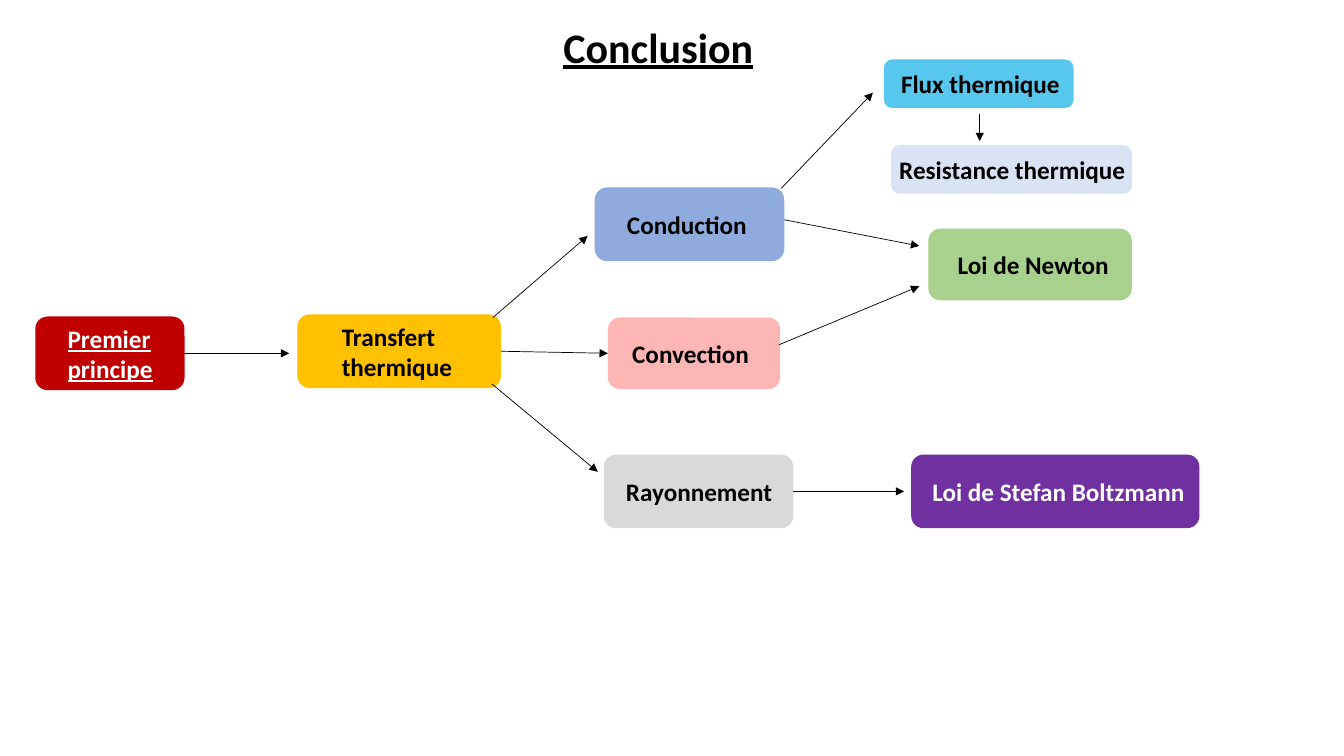
import pptx
import pptx.dml.color
import pptx.enum.shapes
import pptx.enum.text
import pptx.oxml.ns
import pptx.util
from lxml import etree

Pt = pptx.util.Pt
RIGHT, LEFT = 3, 1
MARGIN = 7.2
CORNER = 0.1667 * 0.29
COLOURS = {
    "black": "000000",
    "white": "FFFFFF",
    "red": "C00000",
    "amber": "FFC000",
    "blue": "8FAADC",
    "pink": "FEB6B4",
    "grey": "D9D9D9",
    "sky": "58C7EE",
    "pale": "DAE3F3",
    "green": "A9D18E",
    "purple": "7030A0",
}

# name: text, left, top, width, height, fill, text offset, text format
BOXES = {
    "principle": ("Premier principe", 25.2, 226.1, 106.6, 52.6, "red", 15.8,
                  {"colour": "white", "underline": True}),
    "transfer": ("Transfert thermique", 212.4, 224.6, 145.4, 52.6, "amber", 24.5, {}),
    "conduction": ("Conduction", 424.8, 133.9, 135.4, 52.6, "blue", 15.8, {}),
    "convection": ("Convection", 434.2, 226.8, 123.1, 51.1, "pink", 10.1, {}),
    "radiation": ("Rayonnement", 431.3, 324.7, 135.4, 52.6, "grey", 8.6, {}),
    "flux": ("Flux thermique", 631.4, 42.5, 135.4, 34.6, "sky", 5, {}),
    "resistance": ("Resistance thermique", 636.5, 103.7, 172.1, 34.6, "pale", -1.4, {}),
    "newton": ("Loi de Newton", 663.1, 163.4, 145.4, 51.1, "green", 13.7, {}),
    "stefan": ("Loi de Stefan Boltzmann", 650.9, 324.7, 205.9, 52.6, "purple", 7.9,
               {"colour": "white"}),
}

FREE_ARROWS = [
    ((352.1, 226.8), (419.8, 168.5)),
    ((351.4, 274.3), (427, 337)),
    ((558, 134.6), (623.5, 66.2)),
    ((560.2, 157), (656.6, 175.7)),
    ((556.6, 246.2), (656.6, 204.5)),
    ((699.8, 81.4), (699.8, 100.8)),
]


def colour_of(name):
    return pptx.dml.color.RGBColor.from_string(COLOURS[name])


def write_text(frame, text, size=18, colour="black", underline=False,
               anchor=pptx.enum.text.MSO_ANCHOR.MIDDLE):
    frame.word_wrap = True
    frame.auto_size = pptx.enum.text.MSO_AUTO_SIZE.NONE
    frame.vertical_anchor = anchor
    paragraph = frame.paragraphs[0]
    paragraph.alignment = pptx.enum.text.PP_ALIGN.LEFT
    paragraph.line_spacing = 1.0
    paragraph.space_before = Pt(0)
    run = paragraph.add_run()
    run.text = text
    run.font.name = "Calibri"
    run.font.size = Pt(size)
    run.font.bold = True
    run.font.underline = underline
    run.font.color.rgb = colour_of(colour)


def add_title(slide, text):
    title = slide.shapes.title
    title.left, title.top = Pt(395.3), Pt(11.5)
    title.width, title.height = Pt(296.6), Pt(43.9)
    write_text(title.text_frame, text, size=30, underline=True,
               anchor=pptx.enum.text.MSO_ANCHOR.TOP)


def add_box(slide, text, left, top, width, height, fill, offset, text_format):
    shape = slide.shapes.add_shape(
        pptx.enum.shapes.MSO_SHAPE.ROUNDED_RECTANGLE,
        Pt(left), Pt(top), Pt(width), Pt(height))
    shape.shadow.inherit = False
    shape.fill.solid()
    shape.fill.fore_color.rgb = colour_of(fill)
    shape.line.fill.background()
    frame = shape.text_frame
    frame.margin_left = Pt(max(0, offset + MARGIN - CORNER * height))
    frame.margin_right = frame.margin_top = frame.margin_bottom = Pt(0)
    write_text(frame, text, **text_format)
    return shape


def add_arrow(slide, start, end):
    connector = slide.shapes.add_connector(
        pptx.enum.shapes.MSO_CONNECTOR.STRAIGHT,
        Pt(start[0]), Pt(start[1]), Pt(end[0]), Pt(end[1]))
    connector.line.width = Pt(0.5)
    connector.line.color.rgb = colour_of("black")
    properties = connector.element.spPr
    line = properties.find(pptx.oxml.ns.qn("a:ln"))
    etree.SubElement(line, pptx.oxml.ns.qn("a:tailEnd"), type="triangle")
    etree.SubElement(properties, pptx.oxml.ns.qn("a:effectLst"))
    return connector


def add_arrow_from(slide, shape, end_x):
    x = (shape.left + shape.width) / Pt(1)
    y = (shape.top + shape.height / 2) / Pt(1)
    connector = add_arrow(slide, (x, y), (end_x, y))
    connector.begin_connect(shape, RIGHT)
    return connector


def main():
    presentation = pptx.Presentation()
    presentation.slide_width = Pt(960)
    presentation.slide_height = Pt(540)
    slide = presentation.slides.add_slide(presentation.slide_layouts[5])
    add_title(slide, "Conclusion")
    boxes = {name: add_box(slide, *box) for name, box in BOXES.items()}
    for start, end in FREE_ARROWS:
        add_arrow(slide, start, end)
    add_arrow_from(slide, boxes["principle"], 206.6)
    add_arrow_from(slide, boxes["radiation"], 645.8)
    link = add_arrow_from(slide, boxes["transfer"], 432)
    link.end_connect(boxes["convection"], LEFT)
    presentation.save("out.pptx")


if __name__ == "__main__":
    main()
